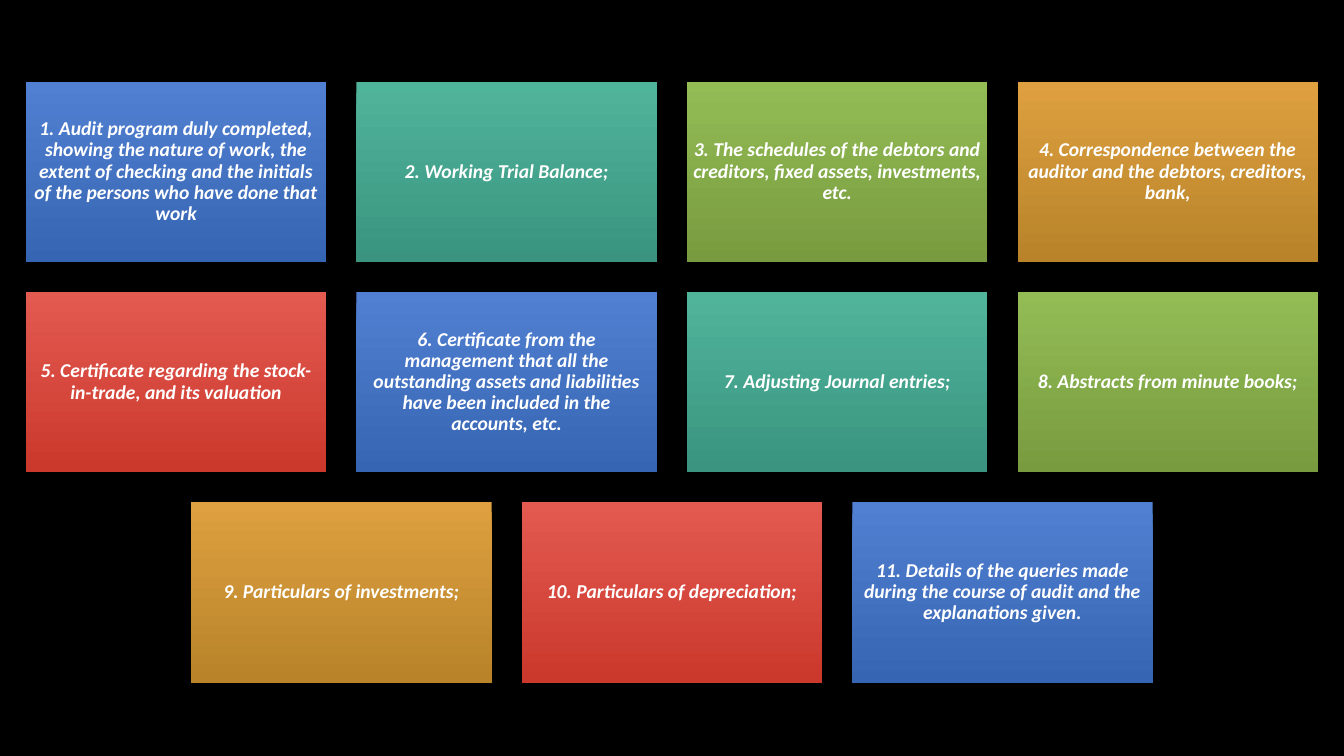
"""Build a slide of eleven audit working paper cards on a black background."""
from dataclasses import dataclass

from pptx import Presentation
from pptx.dml.color import RGBColor
from pptx.enum.shapes import MSO_SHAPE as Preset
from pptx.enum.text import MSO_ANCHOR as Anchor, PP_ALIGN as Align
from pptx.slide import Slide
from pptx.util import Cm, Pt

BLACK = RGBColor(0x00, 0x00, 0x00)
WHITE = RGBColor(0xFF, 0xFF, 0xFF)
BLUE = (RGBColor(0x51, 0x80, 0xD2), RGBColor(0x36, 0x65, 0xB3))
TEAL = (RGBColor(0x50, 0xB4, 0x9B), RGBColor(0x3A, 0x94, 0x7F))
GREEN = (RGBColor(0x93, 0xBC, 0x55), RGBColor(0x78, 0x9B, 0x3F))
ORANGE = (RGBColor(0xDE, 0xA0, 0x40), RGBColor(0xB8, 0x83, 0x29))
RED = (RGBColor(0xE3, 0x5A, 0x51), RGBColor(0xCB, 0x38, 0x2C))
GRADIENTS = (BLUE, TEAL, GREEN, ORANGE, RED)

SLIDE_WIDTH, SLIDE_HEIGHT = 33.87, 19.05
CARD_WIDTH, CARD_HEIGHT = 7.57, 4.54
GAP = 0.76
TOP = 2.06
COLUMNS = 4
INSET = Cm(0.15)

FRAME_FORMAT = {
    "word_wrap": True,
    "vertical_anchor": Anchor.MIDDLE,
    "margin_left": INSET,
    "margin_right": INSET,
    "margin_top": INSET,
    "margin_bottom": INSET,
}
PARAGRAPH_FORMAT = {"alignment": Align.CENTER, "line_spacing": 0.9}
FONT_FORMAT = {"name": "Calibri", "size": Pt(14), "bold": True, "italic": True}

WORKING_PAPERS = (
    "1. Audit program duly completed, showing the nature of work, the extent of "
    "checking and the initials of the persons who have done that work",
    "2. Working Trial Balance;",
    "3. The schedules of the debtors and creditors, fixed assets, investments, etc.",
    "4. Correspondence between the auditor and the debtors, creditors, bank,",
    "5. Certificate regarding the stock-in-trade, and its valuation",
    "6. Certificate from the management that all the outstanding assets and "
    "liabilities have been included in the accounts, etc.",
    "7. Adjusting Journal entries;",
    "8. Abstracts from minute books;",
    "9. Particulars of investments;",
    "10. Particulars of depreciation;",
    "11. Details of the queries made during the course of audit and the "
    "explanations given.",
)


@dataclass(frozen=True)
class Card:
    """One working paper with its place in cm and its gradient."""

    wording: str
    left: float
    top: float
    gradient: tuple[RGBColor, RGBColor]


def apply_format(target: object, values: dict[str, object]) -> None:
    """Set every named attribute on the target."""
    for attribute, value in values.items():
        setattr(target, attribute, value)


def lay_out(papers: tuple[str, ...]) -> list[Card]:
    """Place the papers in centred rows and cycle through the gradients."""
    cards = []
    for index, wording in enumerate(papers):
        row, column = divmod(index, COLUMNS)
        in_row = min(COLUMNS, len(papers) - row * COLUMNS)
        row_width = in_row * (CARD_WIDTH + GAP) - GAP
        left = (SLIDE_WIDTH - row_width) / 2 + column * (CARD_WIDTH + GAP)
        top = TOP + row * (CARD_HEIGHT + GAP)
        cards.append(Card(wording, left, top, GRADIENTS[index % len(GRADIENTS)]))
    return cards


def draw_card(slide: Slide, card: Card) -> None:
    """Draw a gradient rectangle with its centred wording."""
    panel = slide.shapes.add_shape(
        Preset.RECTANGLE, Cm(card.left), Cm(card.top), Cm(CARD_WIDTH), Cm(CARD_HEIGHT)
    )
    panel.shadow.inherit = False
    panel.line.fill.background()
    panel.fill.gradient()
    panel.fill.gradient_angle = 270
    for stop, position, color in zip(panel.fill.gradient_stops, (0, 1), card.gradient):
        stop.position = position
        stop.color.rgb = color

    apply_format(panel.text_frame, FRAME_FORMAT)
    paragraph = panel.text_frame.paragraphs[0]
    apply_format(paragraph, PARAGRAPH_FORMAT)
    run = paragraph.add_run()
    run.text = card.wording
    apply_format(run.font, FONT_FORMAT)
    run.font.color.rgb = WHITE


def main() -> None:
    """Create the presentation and save it."""
    deck = Presentation()
    deck.slide_width, deck.slide_height = Cm(SLIDE_WIDTH), Cm(SLIDE_HEIGHT)
    slide = deck.slides.add_slide(deck.slide_layouts[6])
    slide.background.fill.solid()
    slide.background.fill.fore_color.rgb = BLACK
    for card in lay_out(WORKING_PAPERS):
        draw_card(slide, card)
    deck.save("out.pptx")


if __name__ == "__main__":
    main()
